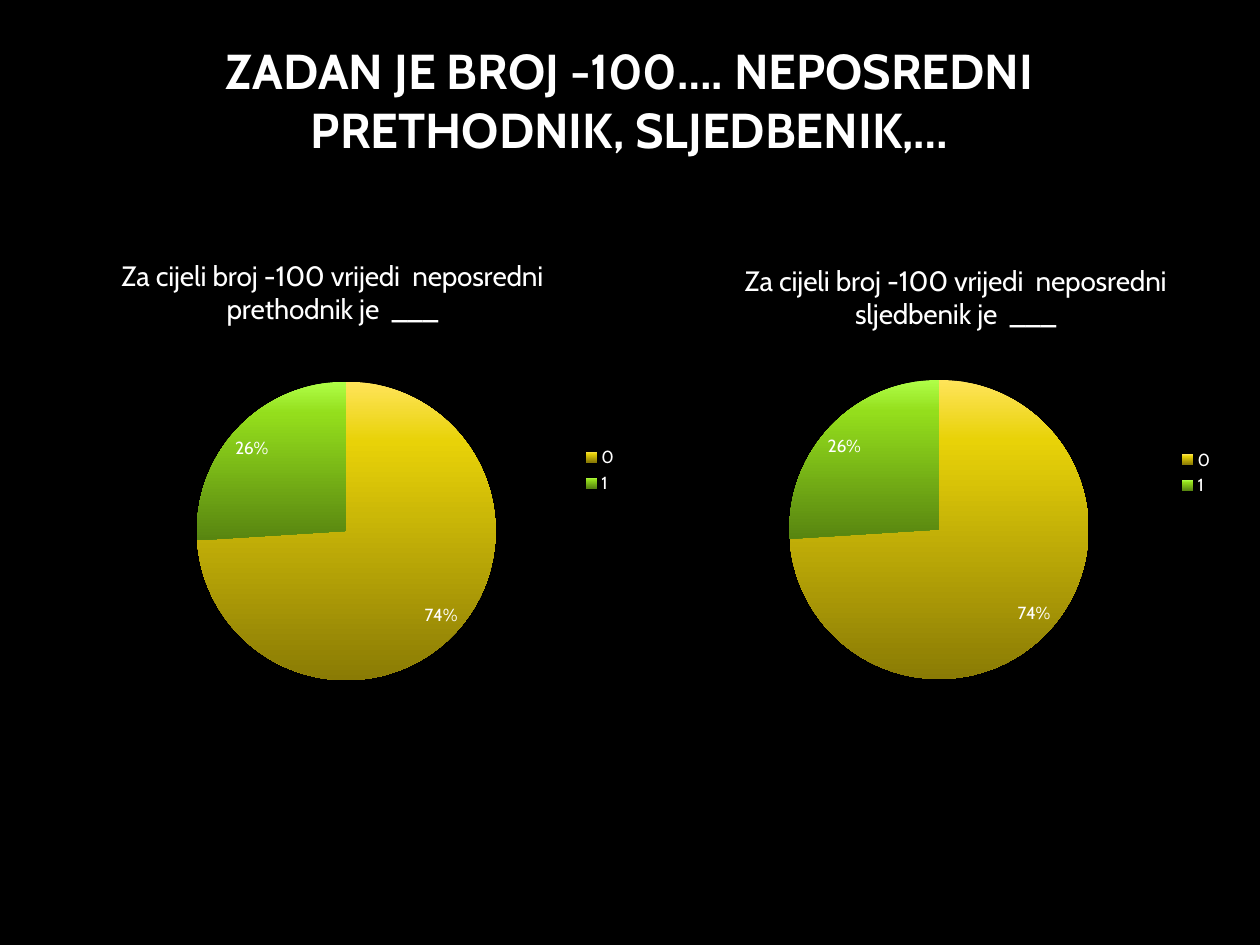
from pptx import Presentation
from pptx.chart.data import CategoryChartData
from pptx.dml.color import RGBColor
from pptx.enum.chart import XL_CHART_TYPE, XL_LABEL_POSITION, XL_LEGEND_POSITION
from pptx.enum.text import MSO_ANCHOR, PP_ALIGN
from pptx.oxml import parse_xml
from pptx.oxml.ns import nsdecls
from pptx.util import Cm, Pt

COLORS = {"background": "000000", "text": "FFFFFF"}
# Light, main and dark shade of each slice, from top to bottom
SLICE_SHADES = [("FFE45A", "E8D208", "8A7B05"), ("B0FF48", "94DE1C", "588510")]
SHADE_STOPS = (0, 20, 100)
FONT = "Cabin"
ANSWERS = {"0": 74, "1": 26}


def format_font(font, size, bold=False):
    font.name = FONT
    font.size = Pt(size)
    font.bold = bold
    font.color.rgb = RGBColor.from_string(COLORS["text"])


def add_text(frame, text, size, bold=False):
    """Write centred text, one paragraph for each line of it."""
    for index, line in enumerate(text.split("\n")):
        para = frame.add_paragraph() if index else frame.paragraphs[0]
        para.alignment = PP_ALIGN.CENTER
        span = para.add_run()
        span.text = line
        format_font(span.font, size, bold)


def add_heading(page, box, text):
    frame = page.shapes.add_textbox(*map(Cm, box)).text_frame
    frame.word_wrap = True
    frame.vertical_anchor = MSO_ANCHOR.MIDDLE
    frame.margin_bottom = Cm(1.3)
    add_text(frame, text, size=28, bold=True)


def shade_slice(slice_format, shades):
    """Fill a slice with a vertical gradient and remove its outline."""
    slice_format.line.fill.background()
    properties = slice_format.fill
    properties.gradient()
    properties.gradient_angle = 270
    stops = "".join(
        f'<a:gs pos="{stop * 1000}"><a:srgbClr val="{shade}"/></a:gs>'
        for stop, shade in zip(SHADE_STOPS, shades)
    )
    stop_list = parse_xml(f'<a:gsLst {nsdecls("a")}>{stops}</a:gsLst>')
    old_list = properties.gradient_stops[0]._gs.getparent()
    old_list.getparent().replace(old_list, stop_list)


def place_plot(chart, box, plot_box):
    """Fix the inner plot area, given in cm from the corner of the chart box."""
    width, height = box[2:]
    values = "".join(
        f'<c:{tag} val="{length / whole:.4f}"/>'
        for tag, length, whole in zip("xywh", plot_box, (width, height) * 2)
    )
    layout = parse_xml(
        f'<c:layout {nsdecls("c")}><c:manualLayout>'
        '<c:layoutTarget val="inner"/><c:xMode val="edge"/><c:yMode val="edge"/>'
        f"{values}</c:manualLayout></c:layout>"
    )
    plot_area = chart.plots[0]._element.getparent()
    for old_layout in plot_area.findall(layout.tag):
        plot_area.remove(old_layout)
    plot_area.insert(0, layout)


def add_answer_pie(page, box, title, plot_box):
    data = CategoryChartData()
    data.categories = list(ANSWERS)
    data.add_series("Series 1", list(ANSWERS.values()))
    chart = page.shapes.add_chart(XL_CHART_TYPE.PIE, *map(Cm, box), data).chart
    format_font(chart.font, 10)

    chart.has_title = True
    add_text(chart.chart_title.text_frame, title, size=16)
    chart.chart_title.include_in_layout = False

    chart.has_legend = True
    chart.legend.position = XL_LEGEND_POSITION.RIGHT
    chart.legend.include_in_layout = False
    format_font(chart.legend.font, 10)

    plot = chart.plots[0]
    plot.vary_by_categories = True
    plot.has_data_labels = True
    labels = plot.data_labels
    labels.show_percentage = True
    labels.show_value = False
    labels.number_format = "0%"
    labels.number_format_is_linked = False
    labels.position = XL_LABEL_POSITION.BEST_FIT
    format_font(labels.font, 10)

    for index, shades in enumerate(SLICE_SHADES):
        shade_slice(plot.series[0].points[index].format, shades)
    place_plot(chart, box, plot_box)


def main():
    deck = Presentation()
    deck.slide_width, deck.slide_height = Cm(25.4), Cm(19.05)
    page = deck.slides.add_slide(deck.slide_layouts[6])
    background = page.background.fill
    background.solid()
    background.fore_color.rgb = RGBColor.from_string(COLORS["background"])

    add_heading(page, (2.16, 0.3, 21.06, 4.6),
                "ZADAN JE BROJ -100…. NEPOSREDNI PRETHODNIK, SLJEDBENIK,…")
    question = "Za cijeli broj -100 vrijedi  neposredni\n{} je  ___"
    add_answer_pie(page, (0.71, 4.8, 11.99, 9.35),
                   question.format("prethodnik"), (3.26, 2.89, 6.02, 6.03))
    add_answer_pie(page, (13.82, 4.9, 10.9, 9.25),
                   question.format("sljedbenik"), (2.09, 2.76, 6.04, 6.03))
    deck.save("out.pptx")


if __name__ == "__main__":
    main()
